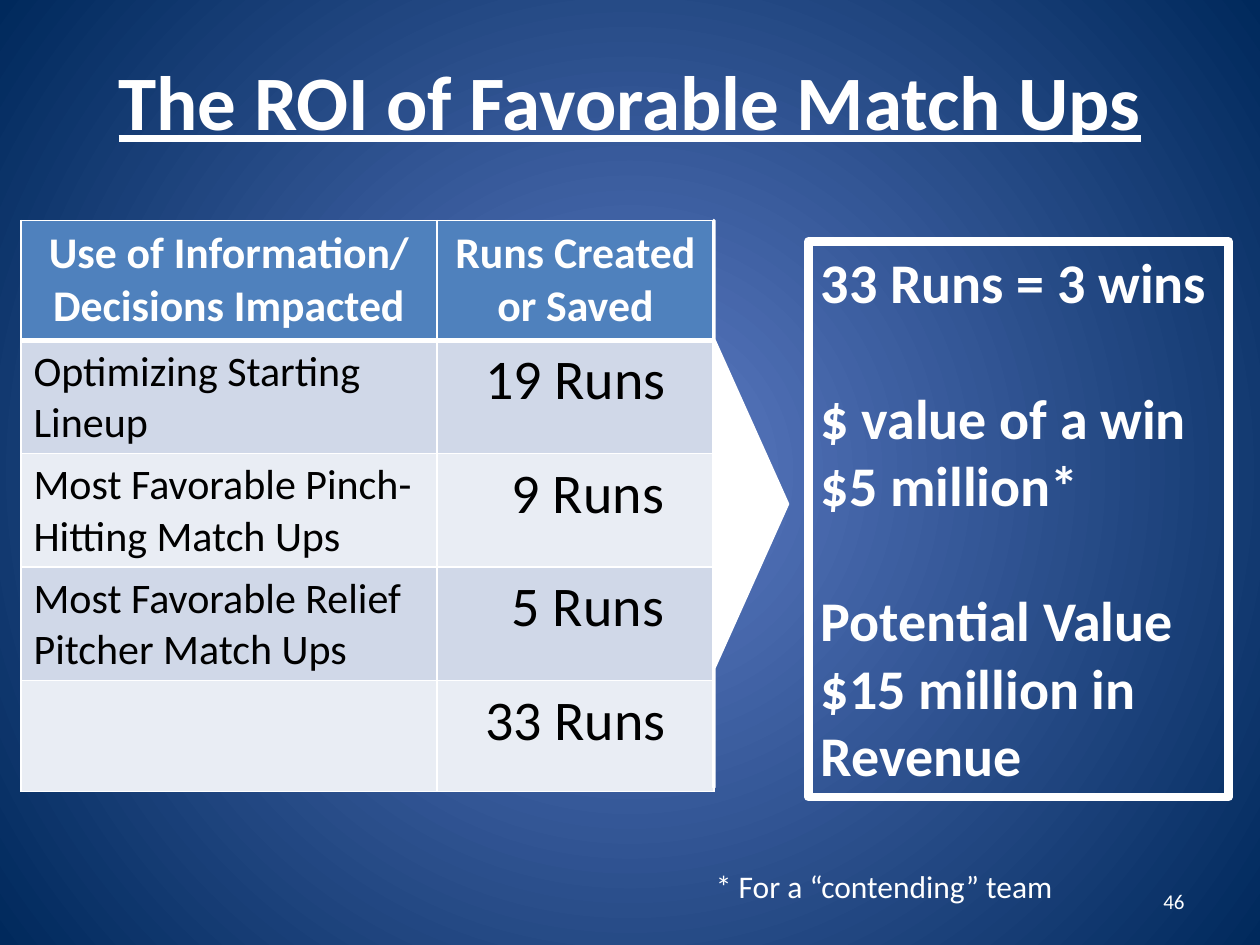
from dataclasses import dataclass

from lxml.etree import SubElement
from pptx import Presentation
from pptx.dml.color import RGBColor
from pptx.enum.shapes import MSO_SHAPE as Preset
from pptx.enum.text import MSO_ANCHOR as Anchor, PP_ALIGN as Align
from pptx.oxml.ns import qn
from pptx.util import Pt


@dataclass(frozen=True)
class Theme:
    font: str = "Calibri"
    white: str = "FFFFFF"
    black: str = "000000"
    glow: str = "5E7CC5"
    navy: str = "00295C"
    header: str = "4F81BD"
    bands: tuple = ("D0D8E8", "E9EDF4")
    title_size: int = 44
    large_size: int = 32
    header_size: int = 25
    body_size: int = 24
    note_size: int = 18
    number_size: int = 12


class SlideBuilder:
    def __init__(self, slide, theme):
        self.slide = slide
        self.theme = theme

    def add_text(self, paragraph, text, size, color=None, bold=False, underline=False,
                 align=Align.LEFT):
        paragraph.alignment = align
        run = paragraph.add_run()
        run.text = text
        font = run.font
        font.name, font.size = self.theme.font, Pt(size)
        font.bold, font.underline = bold, underline
        font.color.rgb = RGBColor.from_string(color or self.theme.white)

    def background(self):
        """Radial gradient, bright in the middle."""
        fill = self.slide.background.fill
        fill.gradient()
        stops = zip(fill.gradient_stops, (self.theme.glow, self.theme.navy), (0, 1))
        for stop, color, position in stops:
            stop.color.rgb = RGBColor.from_string(color)
            stop.position = position
        gradient = self.slide.element.find(".//" + qn("a:gradFill"))
        gradient.remove(gradient.find(qn("a:lin")))
        radial = SubElement(gradient, qn("a:path"), path="circle")
        center = {side: "50000" for side in "ltrb"}
        SubElement(radial, qn("a:fillToRect"), center)

    def title(self, text, left, top, width, height):
        title = self.slide.shapes.title
        title.left, title.top = Pt(left), Pt(top)
        title.width, title.height = Pt(width), Pt(height)
        frame = title.text_frame
        frame.vertical_anchor = Anchor.MIDDLE
        self.add_text(frame.paragraphs[0], text, self.theme.title_size, bold=True,
                      underline=True, align=Align.CENTER)

    def label(self, text, left, top, width, height, size, align=Align.LEFT,
              anchor=Anchor.TOP):
        box = self.slide.shapes.add_textbox(Pt(left), Pt(top), Pt(width), Pt(height))
        frame = box.text_frame
        frame.word_wrap = True
        frame.vertical_anchor = anchor
        self.add_text(frame.paragraphs[0], text, size, align=align)

    def shape(self, preset, left, top, width, height, line_width, fill=None):
        shape = self.slide.shapes.add_shape(preset, Pt(left), Pt(top), Pt(width), Pt(height))
        shape.shadow.inherit = False
        if fill:
            shape.fill.solid()
            shape.fill.fore_color.rgb = RGBColor.from_string(fill)
        else:
            shape.fill.background()
        shape.line.color.rgb = RGBColor.from_string(self.theme.white)
        shape.line.width = Pt(line_width)
        return shape

    def panel(self, groups, left, top, width, height):
        """Outlined box; each group of lines is set off by one line of space."""
        size = self.theme.large_size
        frame = self.shape(Preset.RECTANGLE, left, top, width, height, 5).text_frame
        frame.word_wrap = True
        frame.vertical_anchor = Anchor.TOP
        paragraph = frame.paragraphs[0]
        for group_index, lines in enumerate(groups):
            for line_index, text in enumerate(lines):
                if group_index or line_index:
                    paragraph = frame.add_paragraph()
                if group_index and not line_index:
                    paragraph.space_before = Pt(39)
                self.add_text(paragraph, text, size, bold=True)

    def cell_borders(self, cell, top, bottom):
        properties = cell._tc.get_or_add_tcPr()
        widths = {"a:lnL": 1, "a:lnR": 1, "a:lnT": top, "a:lnB": bottom}
        for index, (tag, width) in enumerate(widths.items()):
            line = properties.makeelement(qn(tag), {"w": str(Pt(width))})
            fill = SubElement(line, qn("a:solidFill"))
            SubElement(fill, qn("a:srgbClr"), val=self.theme.white)
            properties.insert(index, line)

    def table(self, rows, left, top, widths, heights):
        theme = self.theme
        table = self.slide.shapes.add_table(
            len(rows), len(widths), Pt(left), Pt(top), Pt(sum(widths)), Pt(sum(heights))).table
        table.first_row = table.horz_banding = False
        for column, width in zip(table.columns, widths):
            column.width = Pt(width)
        for row_index, (texts, height) in enumerate(zip(rows, heights)):
            table.rows[row_index].height = Pt(height)
            is_header = row_index == 0
            color = theme.header if is_header else theme.bands[(row_index - 1) % 2]
            for column_index, text in enumerate(texts):
                cell = table.cell(row_index, column_index)
                cell.fill.solid()
                cell.fill.fore_color.rgb = RGBColor.from_string(color)
                self.cell_borders(cell, 3 if row_index == 1 else 1, 3 if is_header else 1)
                paragraph = cell.text_frame.paragraphs[0]
                if is_header:
                    self.add_text(paragraph, text, theme.header_size, bold=True,
                                  align=Align.CENTER)
                elif column_index:
                    # Single digits line up with the units of the larger numbers
                    if len(text.split()[0]) == 1:
                        cell.margin_left = Pt(21.7)
                    self.add_text(paragraph, text, theme.large_size, theme.black,
                                  align=Align.CENTER)
                elif text:
                    self.add_text(paragraph, text, theme.body_size, theme.black)
                else:
                    paragraph.font.size = Pt(theme.body_size)


def main():
    presentation = Presentation()
    presentation.slide_width, presentation.slide_height = Pt(720), Pt(540)
    theme = Theme()
    slide = presentation.slides.add_slide(presentation.slide_layouts[5])
    builder = SlideBuilder(slide, theme)

    # Background, title and slide number
    builder.background()
    builder.title("The ROI of Favorable Match Ups", 36, 12, 648, 90)
    builder.label("46", 516, 500.5, 168, 28.8, theme.number_size, Align.RIGHT, Anchor.MIDDLE)

    # Runs gained by each decision
    builder.table([
        ("Use of Information/ Decisions Impacted", "Runs Created or Saved"),
        ("Optimizing Starting Lineup", "19 Runs"),
        ("Most Favorable Pinch-Hitting Match Ups", "9 Runs"),
        ("Most Favorable Relief Pitcher Match Ups", "5 Runs"),
        ("", "33 Runs"),
    ], 12, 126, (237.6, 158.4), (68.4, 64, 64, 64, 63.4))

    # Value of the runs
    builder.panel([
        ("33 Runs = 3 wins",),
        ("$ value of a win", "$5 million*"),
        ("Potential Value", "$15 million in Revenue"),
    ], 462, 138, 240, 317.5)
    builder.label("* For a “contending” team", 402, 492, 282, 28.8, theme.note_size)

    # Arrow from the table to the value
    arrow = builder.shape(Preset.RIGHT_ARROW_CALLOUT, 408, 126, 42, 324, 2, theme.white)
    for index, value in enumerate((0.25, 2.23, 1, 0.65)):
        arrow.adjustments[index] = value

    presentation.save("out.pptx")


if __name__ == "__main__":
    main()
